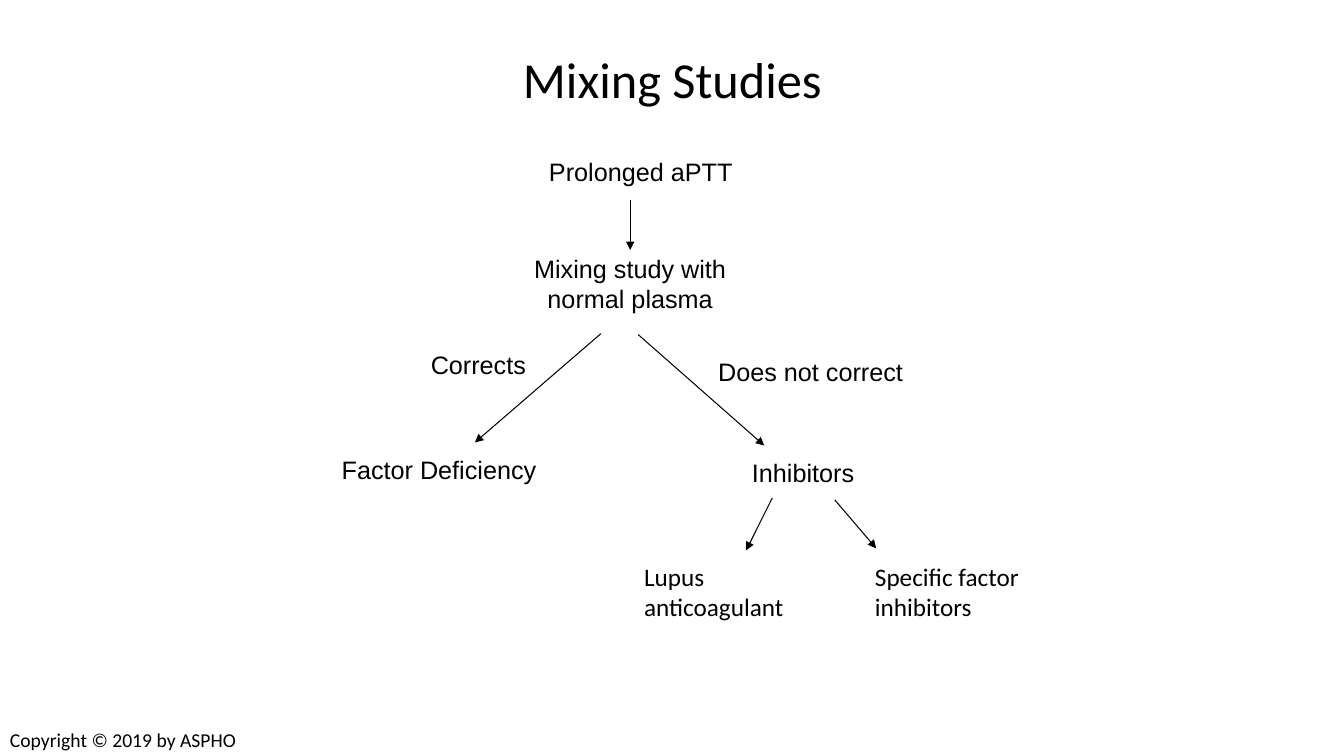
"""Build the Mixing Studies decision tree slide."""
from lxml import etree
from pptx import Presentation
from pptx.dml.color import RGBColor
from pptx.enum.shapes import MSO_CONNECTOR
from pptx.enum.text import MSO_ANCHOR, PP_ALIGN
from pptx.oxml.ns import qn
from pptx.util import Inches, Pt

BLACK = RGBColor(0, 0, 0)
CENTER, LEFT = PP_ALIGN.CENTER, PP_ALIGN.LEFT
TOP, MIDDLE = MSO_ANCHOR.TOP, MSO_ANCHOR.MIDDLE
STRAIGHT = MSO_CONNECTOR.STRAIGHT

TITLE = ("Mixing Studies", (2.17, 0.36, 9, 0.92))
STEPS = [
    ("Prolonged aPTT", (4.48, 1.5, 3.75, 0.4)),
    ("Mixing study with normal plasma", (5, 2.46, 2.5, 0.71)),
    ("Corrects", (4.08, 3.42, 1.33, 0.4)),
    ("Does not correct", (6.79, 3.49, 2.5, 0.4)),
    ("Factor Deficiency", (3.03, 4.46, 2.65, 0.4)),
    ("Inhibitors", (7.06, 4.49, 1.81, 0.4)),
]
INHIBITOR_TYPES = [
    ("Lupus anticoagulant", (6.29, 5.52, 2, 0.71)),
    ("Specific factor inhibitors", (8.58, 5.52, 2.1, 0.71)),
]
COPYRIGHT = ("Copyright © 2019 by ASPHO", (0, 7.17, 2.5, 0.34))
ARROWS = [
    ((6.25, 1.98), (6.25, 2.48)),
    ((5.96, 3.31), (4.71, 4.39)),
    ((6.33, 3.32), (7.58, 4.42)),
    ((7.66, 4.94), (7.4, 5.46)),
    ((8.28, 4.96), (8.69, 5.44)),
]


def add_text(slide, text, box, font="Calibri", size=18, align=LEFT, anchor=TOP):
    """Add a wrapped text box and return its paragraph."""
    shape = slide.shapes.add_textbox(*map(Inches, box))
    frame = shape.text_frame
    frame.word_wrap = True
    frame.vertical_anchor = anchor
    paragraph = frame.paragraphs[0]
    paragraph.text = text
    paragraph.alignment = align
    paragraph.font.name = font
    paragraph.font.size = Pt(size)
    paragraph.font.color.rgb = BLACK
    return paragraph


def add_arrow(slide, start, end):
    """Add a thin arrow from start to end."""
    arrow = slide.shapes.add_connector(STRAIGHT, *map(Inches, start + end))
    arrow.line.color.rgb = BLACK
    arrow.line.width = Pt(0.75)
    etree.SubElement(arrow.line._get_or_add_ln(), qn("a:tailEnd"), type="triangle")
    etree.SubElement(arrow._element.spPr, qn("a:effectLst"))


def main():
    """Create and save the presentation."""
    presentation = Presentation()
    presentation.slide_width = Inches(13.33)
    presentation.slide_height = Inches(7.5)
    slide = presentation.slides.add_slide(presentation.slide_layouts[6])
    title = add_text(slide, *TITLE, size=36, align=CENTER, anchor=MIDDLE)
    title.line_spacing = 0.9
    for text, box in STEPS:
        add_text(slide, text, box, font="Arial", align=CENTER)
    for text, box in INHIBITOR_TYPES:
        add_text(slide, text, box)
    add_text(slide, *COPYRIGHT, size=14)
    for start, end in ARROWS:
        add_arrow(slide, start, end)
    presentation.save("out.pptx")


if __name__ == "__main__":
    main()
